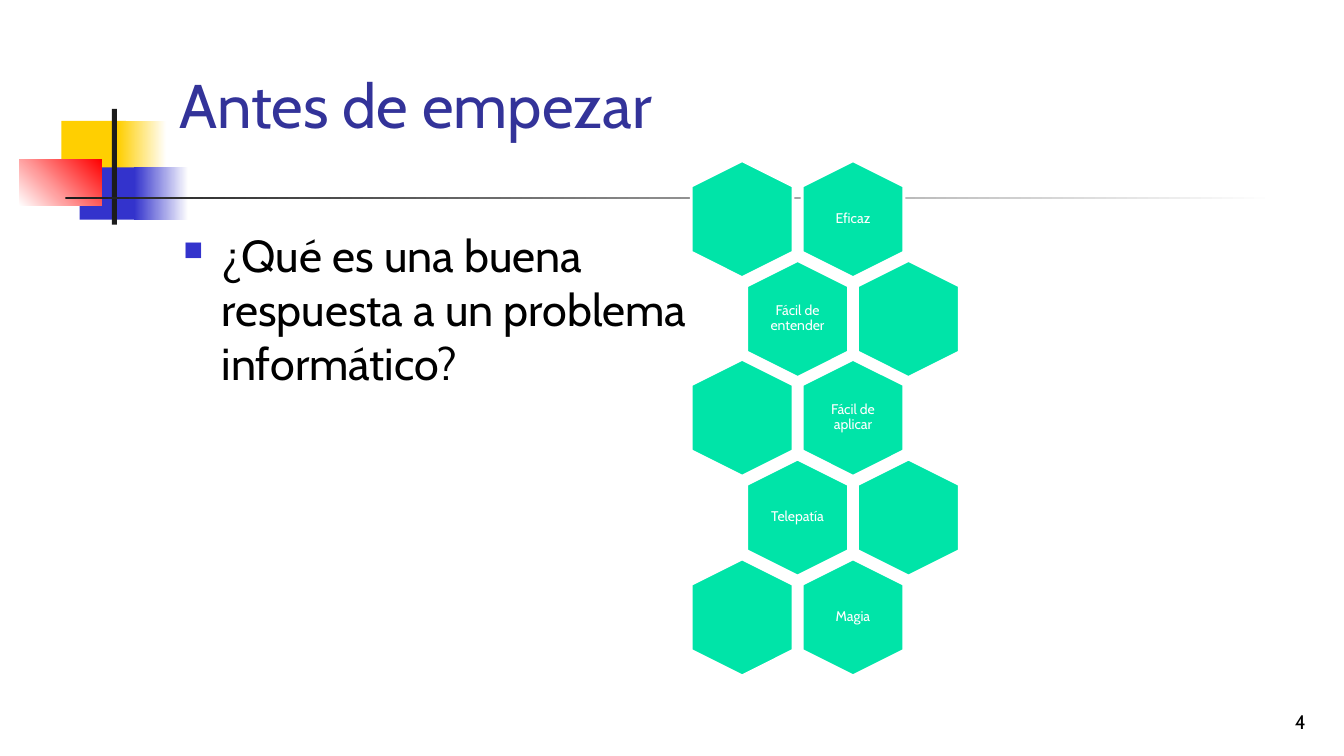
from dataclasses import dataclass
from typing import Optional

from lxml.etree import SubElement
from pptx import Presentation
from pptx.dml.color import RGBColor
from pptx.enum.shapes import MSO_SHAPE as Kind
from pptx.enum.text import MSO_ANCHOR as Anchor, MSO_AUTO_SIZE as Fit, PP_ALIGN as Align
from pptx.oxml.ns import qn
from pptx.util import Emu, Pt

SCALE = 9144


@dataclass(frozen=True)
class Theme:
    font: str = "Cabin"
    white: str = "FFFFFF"
    black: str = "000000"
    ink: str = "1C1C1C"
    gold: str = "FFCF01"
    blue: str = "3333CC"
    red: str = "FF0000"
    navy: str = "333399"
    mint: str = "00E4A8"
    title: int = 44
    body: int = 32
    page: int = 14
    label: int = 10
    edge: int = 2


@dataclass(frozen=True)
class Box:
    left: int
    top: int
    width: int
    height: int


@dataclass(frozen=True)
class Block:
    box: Box
    color: str
    fade: Optional[str] = None
    angle: int = 0


THEME = Theme()
BLOCKS = (
    Block(Box(61, 120, 64, 52), THEME.gold),
    Block(Box(117, 120, 48, 52), THEME.gold, THEME.white),
    Block(Box(79, 166, 62, 52), THEME.blue),
    Block(Box(133, 166, 54, 52), THEME.blue, THEME.white),
    Block(Box(19, 158, 82, 46), THEME.white, THEME.red, 45),
    Block(Box(111, 108, 5, 115), THEME.ink),
    Block(Box(65, 195, 1200, 3), THEME.ink, THEME.white),
)
QUESTION = ("¿Qué es una buena ", "respuesta a un problema ", "informático?")
LABELS = ("Eficaz", "Fácil de entender", "Fácil de aplicar", "Telepatía", "Magia")
HEX = Box(678, 167, 116, 101)
LABEL = Box(23, 10, 70, 80)
COLS = 2
STEP = 110
RISE = 98.75


def px(count: float) -> Emu:
    return Emu(round(count * SCALE))


def place(box: Box) -> tuple[Emu, Emu, Emu, Emu]:
    return px(box.left), px(box.top), px(box.width), px(box.height)


def rgb(color: str) -> RGBColor:
    return RGBColor.from_string(color)


def write(shape, *lines: str, size: int, color: str, align=Align.LEFT,
          anchor=Anchor.TOP, inset: Optional[int] = None, pitch: float = 1.0,
          before: float = 0, after: float = 0):
    frame = shape.text_frame
    frame.word_wrap = True
    frame.auto_size = Fit.NONE
    frame.vertical_anchor = anchor
    if inset is not None:
        frame.margin_left = frame.margin_right = px(inset)
        frame.margin_top = frame.margin_bottom = px(inset)
    para = frame.paragraphs[0]
    para.alignment = align
    para.line_spacing = pitch
    para.space_before, para.space_after = Pt(before), Pt(after)
    for index, line in enumerate(lines):
        if index:
            para.add_line_break()
        run = para.add_run()
        run.text = line
        run.font.name = THEME.font
        run.font.size = Pt(size)
        run.font.color.rgb = rgb(color)
    return para


def bullet(para, mark: str, color: str, share: int, indent: int) -> None:
    props = para._p.get_or_add_pPr()
    props.set("marL", str(px(indent)))
    props.set("indent", str(-px(indent)))
    tint = SubElement(props, qn("a:buClr"))
    SubElement(tint, qn("a:srgbClr"), val=color)
    SubElement(props, qn("a:buSzPct"), val=str(share * 1000))
    SubElement(props, qn("a:buChar"), char=mark)


def draw(shapes, block: Block) -> None:
    shape = shapes.add_shape(Kind.RECTANGLE, *place(block.box))
    shape.shadow.inherit = False
    shape.line.fill.background()
    fill = shape.fill
    if block.fade is None:
        fill.solid()
        fill.fore_color.rgb = rgb(block.color)
        return
    fill.gradient()
    fill.gradient_angle = block.angle
    for stop, color in zip(fill.gradient_stops, (block.color, block.fade)):
        stop.color.rgb = rgb(color)


def cell(shapes, row: int, col: int) -> None:
    left = HEX.left + STEP * col + STEP // 2 * (row % 2)
    top = round(HEX.top + RISE * row)
    box = Box(left, top, HEX.width, HEX.height)
    shape = shapes.add_shape(Kind.HEXAGON, *place(box))
    shape.rotation = 90
    shape.shadow.inherit = False
    shape.fill.solid()
    shape.fill.fore_color.rgb = rgb(THEME.mint)
    shape.line.color.rgb = rgb(THEME.white)
    shape.line.width = Pt(THEME.edge)


def label(shapes, row: int, text: str) -> None:
    col = 1 - row % 2
    left = HEX.left + STEP * col + STEP // 2 * (row % 2) + LABEL.left
    top = round(HEX.top + RISE * row) + LABEL.top
    box = Box(left, top, LABEL.width, LABEL.height)
    write(shapes.add_textbox(*place(box)), text, size=THEME.label,
          color=THEME.white, align=Align.CENTER, anchor=Anchor.MIDDLE,
          inset=4, pitch=0.9, after=3.5)


def main() -> None:
    deck = Presentation()
    deck.slide_width, deck.slide_height = px(1333), px(750)
    slide = deck.slides.add_slide(deck.slide_layouts[5])
    shapes = slide.shapes

    for block in BLOCKS:
        draw(shapes, block)

    title = shapes.title
    title.left, title.top, title.width, title.height = place(Box(168, 23, 1136, 160))
    write(title, "Antes de empezar", size=THEME.title, color=THEME.navy,
          anchor=Anchor.MIDDLE)

    body = shapes.add_textbox(*place(Box(172, 221, 1133, 450)))
    para = write(body, *QUESTION, size=THEME.body, color=THEME.black, before=6.4)
    bullet(para, "■", THEME.blue, 60, 38)

    page = shapes.add_textbox(*place(Box(1027, 683, 278, 50)))
    write(page, "4", size=THEME.page, color=THEME.black, align=Align.RIGHT,
          anchor=Anchor.BOTTOM)

    comb = shapes.add_group_shape().shapes
    for row, text in enumerate(LABELS):
        for col in range(COLS):
            cell(comb, row, col)
        label(comb, row, text)

    deck.save("out.pptx")


if __name__ == "__main__":
    main()
